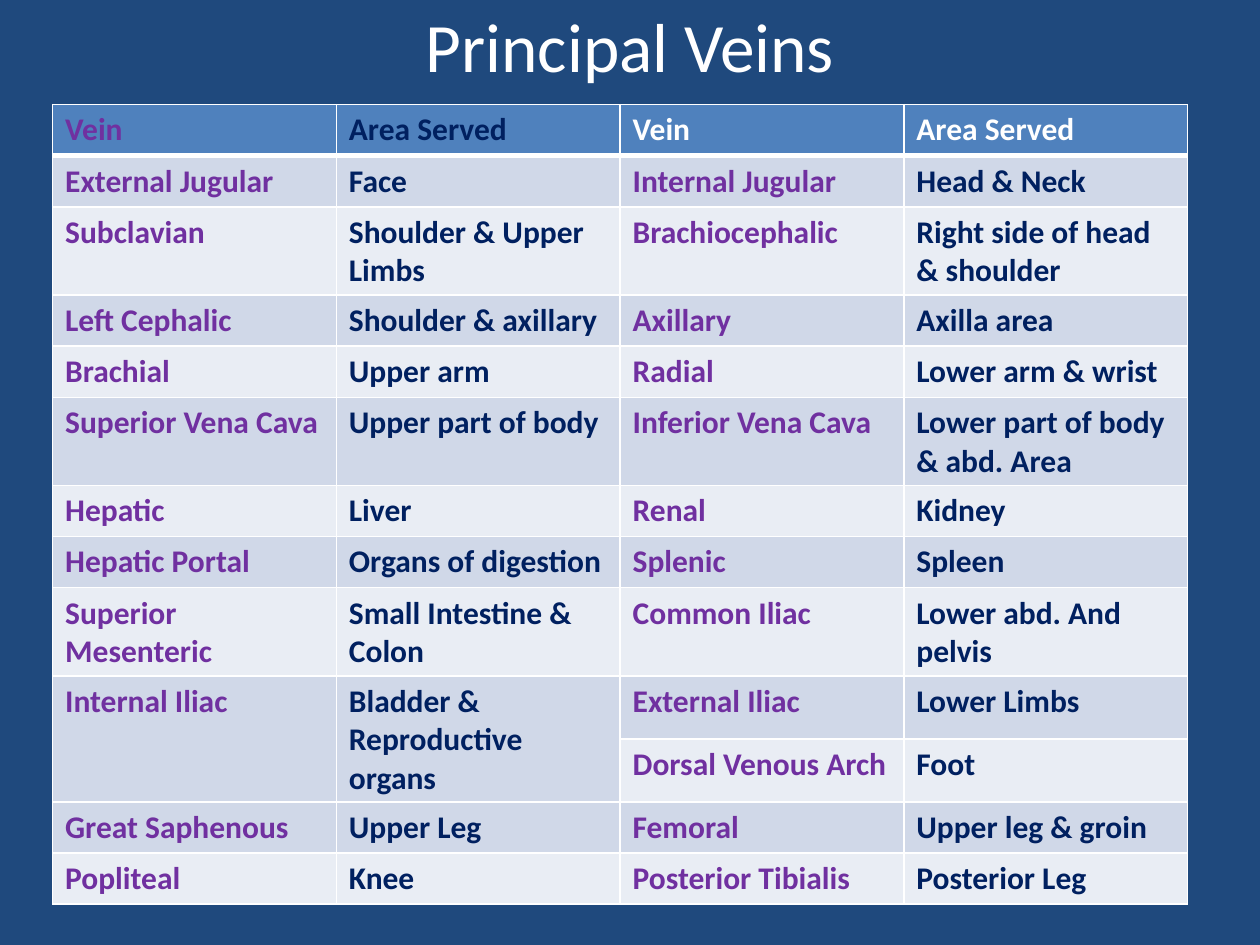
"""Build the Principal Veins slide: a title above a table of veins and areas served."""
from lxml import etree
from pptx import Presentation
from pptx.dml.color import RGBColor
from pptx.enum.text import MSO_ANCHOR, PP_ALIGN
from pptx.oxml.ns import qn
from pptx.util import Cm, Pt

CENTER = PP_ALIGN.CENTER
MIDDLE = MSO_ANCHOR.MIDDLE
FONT = "Calibri"
WHITE, NAVY, PURPLE = "FFFFFF", "002060", "7030A0"
HEADER_FILL, BANDS = "4F81BD", ("E9EDF4", "D0D8E8")
HEADER_COLORS = (PURPLE, NAVY, WHITE, WHITE)
BODY_COLORS = (PURPLE, NAVY, PURPLE, NAVY)
MERGED_ROW = 9
ROWS = [
    ("Vein", "Area Served", "Vein", "Area Served"),
    ("External Jugular", "Face", "Internal Jugular", "Head & Neck"),
    ("Subclavian", "Shoulder & Upper Limbs", "Brachiocephalic", "Right side of head & shoulder"),
    ("Left Cephalic", "Shoulder & axillary", "Axillary", "Axilla area"),
    ("Brachial", "Upper arm", "Radial", "Lower arm & wrist"),
    ("Superior Vena Cava", "Upper part of body", "Inferior Vena Cava", "Lower part of body & abd. Area"),
    ("Hepatic", "Liver", "Renal", "Kidney"),
    ("Hepatic Portal", "Organs of digestion", "Splenic", "Spleen"),
    ("Superior Mesenteric", "Small Intestine & Colon", "Common Iliac", "Lower abd. And pelvis"),
    ("Internal Iliac", "Bladder & Reproductive organs", "External Iliac", "Lower Limbs"),
    ("", "", "Dorsal Venous Arch", "Foot"),
    ("Great Saphenous", "Upper Leg", "Femoral", "Upper leg & groin"),
    ("Popliteal", "Knee", "Posterior Tibialis", "Posterior Leg"),
]


def paint(fill, color):
    fill.solid()
    fill.fore_color.rgb = RGBColor.from_string(color)


def add_run(p, text, size, color, bold=False):
    r = p.add_run()
    r.text = text
    r.font.name = FONT
    r.font.size = Pt(size)
    r.font.bold = bold
    paint(r.font.fill, color)


prs = Presentation()
prs.slide_width, prs.slide_height = Cm(25.4), Cm(19.05)
s = prs.slides.add_slide(prs.slide_layouts[6])
paint(s.background.fill, "1F497D")

sp = s.shapes.add_textbox(Cm(1.27), Cm(0.43), Cm(22.86), Cm(0.94))
tf = sp.text_frame
tf.word_wrap = True
tf.vertical_anchor = MIDDLE
p = tf.paragraphs[0]
p.alignment = CENTER
add_run(p, "Principal Veins", 39.6, WHITE)

table = s.shapes.add_table(len(ROWS), 4, Cm(1.06), Cm(2.11), Cm(22.86), Cm(13.87)).table
for col in table.columns:
    col.width = Cm(5.72)

for i, texts in enumerate(ROWS):
    table.rows[i].height = Cm(1.27 if i in (MERGED_ROW, MERGED_ROW + 1) else 1.03)
    colors = BODY_COLORS if i else HEADER_COLORS
    for j, text in enumerate(texts):
        cell = table.cell(i, j)
        tc_pr = cell._tc.get_or_add_tcPr()
        for side in ("lnL", "lnR", "lnT", "lnB"):
            thick = (i, side) in ((0, "lnB"), (1, "lnT"))
            ln = etree.SubElement(tc_pr, qn(f"a:{side}"), w=str(Pt(3 if thick else 1)))
            line_fill = etree.SubElement(ln, qn("a:solidFill"))
            etree.SubElement(line_fill, qn("a:srgbClr"), val=WHITE)
        paint(cell.fill, BANDS[i % 2] if i else HEADER_FILL)
        if text:
            add_run(cell.text_frame.paragraphs[0], text, 18, colors[j], True)

for j in range(2):
    table.cell(MERGED_ROW, j).merge(table.cell(MERGED_ROW + 1, j))

prs.save("out.pptx")
